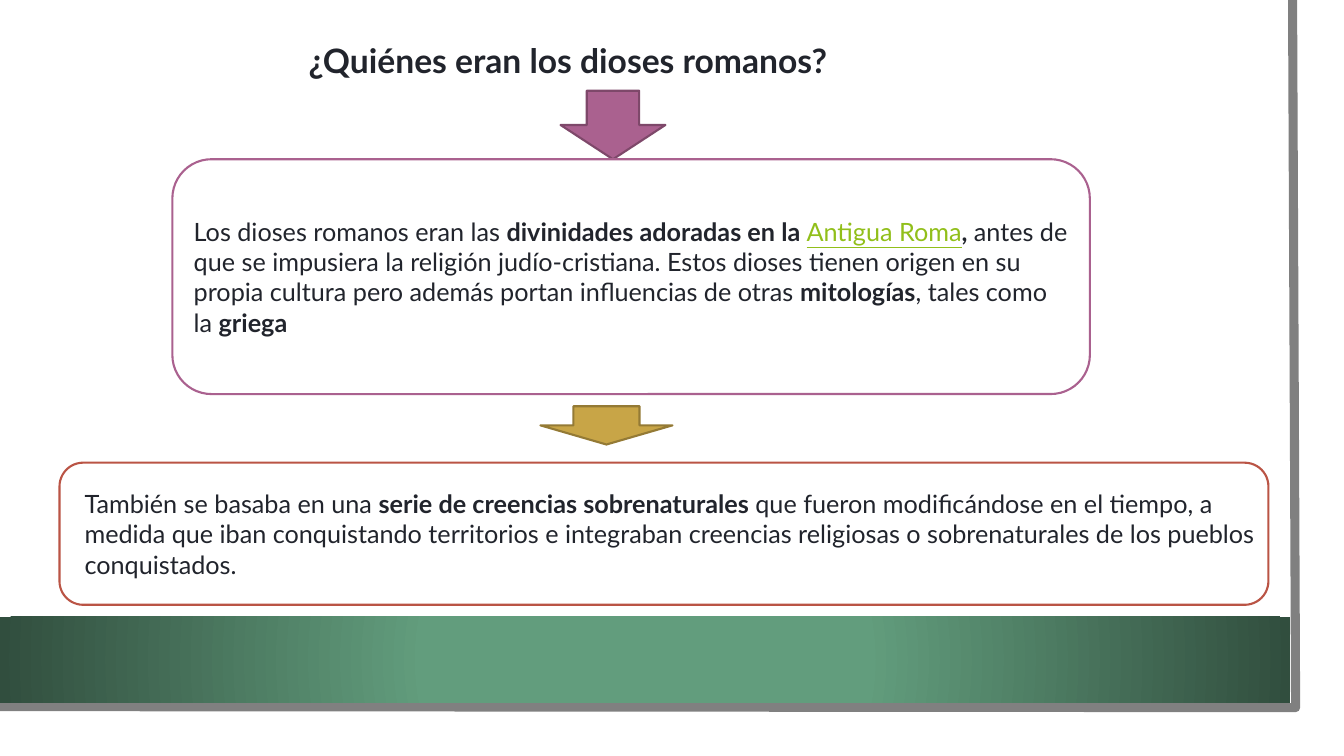
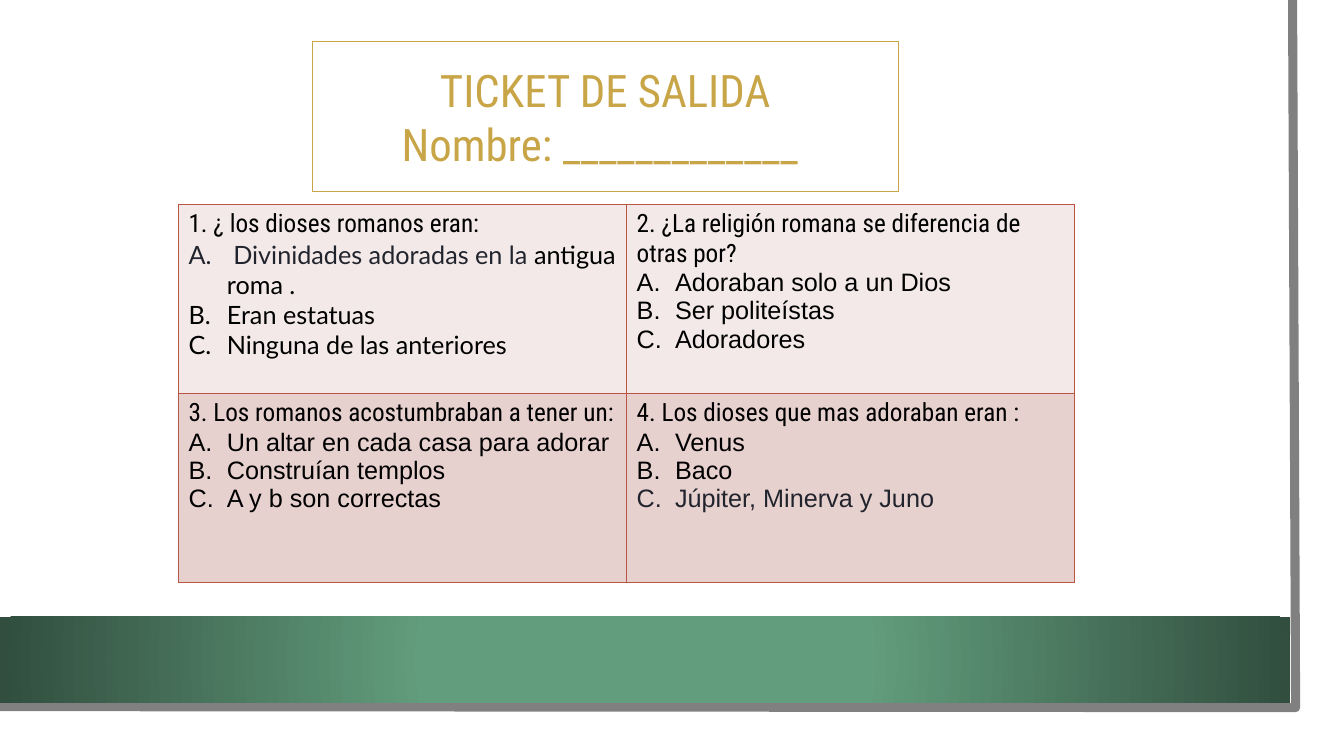
"""Builds two slides about the Roman gods: an explanation and an exit ticket."""
from lxml import etree
from pptx import Presentation
from pptx.dml.color import RGBColor
from pptx.enum.shapes import MSO_SHAPE as Preset
from pptx.enum.text import MSO_ANCHOR as Anchor, MSO_AUTO_SIZE as AutoSize, PP_ALIGN as Align
from pptx.oxml import parse_xml
from pptx.oxml.ns import nsdecls, qn
from pptx.util import Inches, Pt

WHITE = RGBColor(0xFF, 0xFF, 0xFF)
BLACK = RGBColor(0, 0, 0)
INK = RGBColor(0x21, 0x24, 0x2C)
GREY = RGBColor(0x80, 0x80, 0x80)
GREEN = RGBColor(0x62, 0x9D, 0x7D)
DARK_GREEN = RGBColor(0x31, 0x4E, 0x3E)
LINK = RGBColor(0x91, 0xBF, 0x1A)
PURPLE = RGBColor(0xAA, 0x61, 0x8F)
DARK_PURPLE = RGBColor(0x7E, 0x48, 0x6A)
GOLD = RGBColor(0xC8, 0xA5, 0x47)
DARK_GOLD = RGBColor(0x94, 0x7A, 0x35)
RED = RGBColor(0xBA, 0x54, 0x45)
ROW_FILLS = [RGBColor(0xF3, 0xE9, 0xE9), RGBColor(0xE7, 0xD1, 0xCF)]

BODY, HEADING, ANSWER = "Lato", "Roboto Condensed", "Arial"
BOLD = {"bold": True}

GODS_TITLE = "¿Quiénes eran los dioses romanos?"
DEFINITION = [
    ("Los dioses romanos eran las ", {}),
    ("divinidades adoradas en la ", BOLD),
    ("Antigua Roma", {"color": LINK, "underline": True}),
    (",", BOLD),
    (" antes de que se impusiera la religión judío-cristiana. Estos dioses tienen origen en su "
     "propia cultura pero además portan influencias de otras ", {}),
    ("mitologías", BOLD),
    (", tales como la ", {}),
    ("griega", BOLD),
]
BELIEFS = [
    ("También se basaba en una ", {}),
    ("serie de creencias sobrenaturales", BOLD),
    (" que fueron modificándose en el tiempo, a medida que iban conquistando territorios e "
     "integraban creencias religiosas o sobrenaturales de los pueblos conquistados.", {}),
]
TICKET_TITLE = ["TICKET DE SALIDA", "Nombre: _____________ "]
QUESTIONS = [
    [
        ("1. ¿ los dioses romanos eran:", BODY, [
            [(" Divinidades adoradas en la ", {"color": INK}), ("antigua roma .", {})],
            "Eran estatuas", "Ninguna de las anteriores"]),
        ("2. ¿La religión romana se diferencia de otras por?", ANSWER, [
            "Adoraban solo a un Dios", "Ser politeístas", "Adoradores"]),
    ],
    [
        ("3. Los romanos acostumbraban a tener un:", ANSWER, [
            "Un altar en cada casa para adorar", "Construían templos", "A y b son correctas"]),
        ("4. Los dioses que mas adoraban eran :", ANSWER, [
            "Venus", "Baco", [("Júpiter, Minerva y Juno", {"color": INK})]]),
    ],
]


def write(paragraph, content, align=Align.LEFT, lettered=False, **style):
    """Fill a paragraph with a string or with (text, overrides) runs."""
    paragraph.alignment = align
    if lettered:
        properties = paragraph._p.get_or_add_pPr()
        properties.set("marL", str(Inches(0.38)))
        properties.set("indent", str(-Inches(0.38)))
        etree.SubElement(properties, qn("a:buFont")).set("typeface", "+mj-lt")
        etree.SubElement(properties, qn("a:buAutoNum")).set("type", "alphaUcPeriod")
    for text, overrides in [(content, {})] if isinstance(content, str) else content:
        look = {"font": BODY, "size": 18, "color": INK, "bold": False, "underline": False,
                **style, **overrides}
        run = paragraph.add_run()
        run.text = text
        run.font.name = look["font"]
        run.font.size = Pt(look["size"])
        run.font.bold = look["bold"]
        run.font.underline = look["underline"]
        run.font.color.rgb = look["color"]


def place(shape, box):
    shape.left, shape.top, shape.width, shape.height = (Inches(value) for value in box)


def add_preset(slide, preset, box, fill, line, width=1.5):
    shape = slide.shapes.add_shape(preset, *(Inches(value) for value in box))
    shape.shadow.inherit = False
    shape.fill.solid()
    shape.fill.fore_color.rgb = fill
    shape.line.color.rgb = line
    shape.line.width = Pt(width)
    return shape


def add_text_card(slide, box, line, content, margins=(0.1, 0.1)):
    card = add_preset(slide, Preset.ROUNDED_RECTANGLE, box, WHITE, line)
    frame = card.text_frame
    frame.word_wrap = True
    frame.vertical_anchor = Anchor.MIDDLE
    frame.margin_left, frame.margin_right = (Inches(value) for value in margins)
    write(frame.paragraphs[0], content)


def set_title(slide, box, lines, anchor, **style):
    title = slide.shapes.title
    place(title, box)
    frame = title.text_frame
    frame.auto_size = AutoSize.NONE
    frame.word_wrap = True
    frame.vertical_anchor = anchor
    for index, line in enumerate(lines):
        paragraph = frame.add_paragraph() if index else frame.paragraphs[0]
        write(paragraph, line, **style)
    return title


def add_frame_to_layout(layout, slide):
    """Draw the grey edge and the green band, then hand them to the layout."""
    builder = slide.shapes.build_freeform(Inches(12.82), 0)
    builder.add_line_segments(
        [(Inches(12.85), Inches(7.02)), (Inches(-0.03), Inches(7.01))], close=False)
    edge = builder.convert_to_shape()
    edge.shadow.inherit = False
    edge.fill.background()
    edge.line.color.rgb = GREY
    edge.line.width = Pt(6.5)

    band = add_preset(slide, Preset.RECTANGLE, (0, 6.12, 12.8, 0.85), GREEN, GREEN)
    band.line.fill.background()
    solid = band._element.spPr.find(qn("a:solidFill"))
    gradient = parse_xml(
        f'<a:gradFill {nsdecls("a")} rotWithShape="1"><a:gsLst>'
        f'<a:gs pos="34000"><a:srgbClr val="{GREEN}"/></a:gs>'
        f'<a:gs pos="100000"><a:srgbClr val="{DARK_GREEN}"/></a:gs></a:gsLst>'
        '<a:path path="circle"><a:fillToRect l="50000" t="50000" r="50000" b="50000"/></a:path>'
        '</a:gradFill>')
    solid.getparent().replace(solid, gradient)

    for index, shape in enumerate((edge, band)):
        shape._element.nvSpPr.cNvPr.set("id", str(101 + index))
        layout.shapes._spTree.insert(2 + index, shape._element)


def border_cell(cell, color):
    properties = cell._tc.get_or_add_tcPr()
    for index, side in enumerate(("lnL", "lnR", "lnT", "lnB")):
        properties.insert(index, parse_xml(
            f'<a:{side} {nsdecls("a")} w="{Pt(1)}"><a:solidFill><a:srgbClr val="{color}"/>'
            f'</a:solidFill></a:{side}>'))


def build_gods(slide):
    set_title(slide, (2.96, 0.35, 6, 0.5), [GODS_TITLE], Anchor.TOP, size=24, bold=True)
    add_preset(slide, Preset.DOWN_ARROW, (5.56, 0.9, 1.04, 0.68), PURPLE, DARK_PURPLE)
    add_text_card(slide, (1.71, 1.58, 9.1, 2.33), PURPLE, DEFINITION)
    add_preset(slide, Preset.DOWN_ARROW, (5.36, 4.03, 1.31, 0.38), GOLD, DARK_GOLD)
    add_text_card(slide, (0.59, 4.59, 11.99, 1.41), RED, BELIEFS, margins=(0.18, 0.02))


def build_ticket(slide):
    title = set_title(slide, (3.1, 0.41, 5.81, 1.49), TICKET_TITLE, Anchor.MIDDLE,
                      align=Align.CENTER, font=HEADING, size=32, color=GOLD)
    title._element.spPr.append(
        parse_xml(f'<a:prstGeom {nsdecls("a")} prst="roundRect"><a:avLst/></a:prstGeom>'))
    title.line.color.rgb = GOLD
    title.line.width = Pt(0.75)

    table = slide.shapes.add_table(
        2, 2, Inches(1.77), Inches(2.03), Inches(8.89), Inches(3.75)).table
    table.first_row = table.horz_banding = False
    for row, (questions, fill) in enumerate(zip(QUESTIONS, ROW_FILLS)):
        for column, (question, font, answers) in enumerate(questions):
            cell = table.cell(row, column)
            cell.fill.solid()
            cell.fill.fore_color.rgb = fill
            border_cell(cell, RED)
            frame = cell.text_frame
            write(frame.paragraphs[0], question, font=HEADING, color=BLACK)
            for answer in answers:
                write(frame.add_paragraph(), answer, lettered=True, font=font, color=BLACK)


def main():
    presentation = Presentation()
    presentation.slide_width, presentation.slide_height = Inches(13.33), Inches(7.5)
    layout = presentation.slide_layouts[5]
    gods, ticket = (presentation.slides.add_slide(layout) for _ in range(2))
    add_frame_to_layout(layout, gods)
    build_gods(gods)
    build_ticket(ticket)
    presentation.save("out.pptx")


if __name__ == "__main__":
    main()
